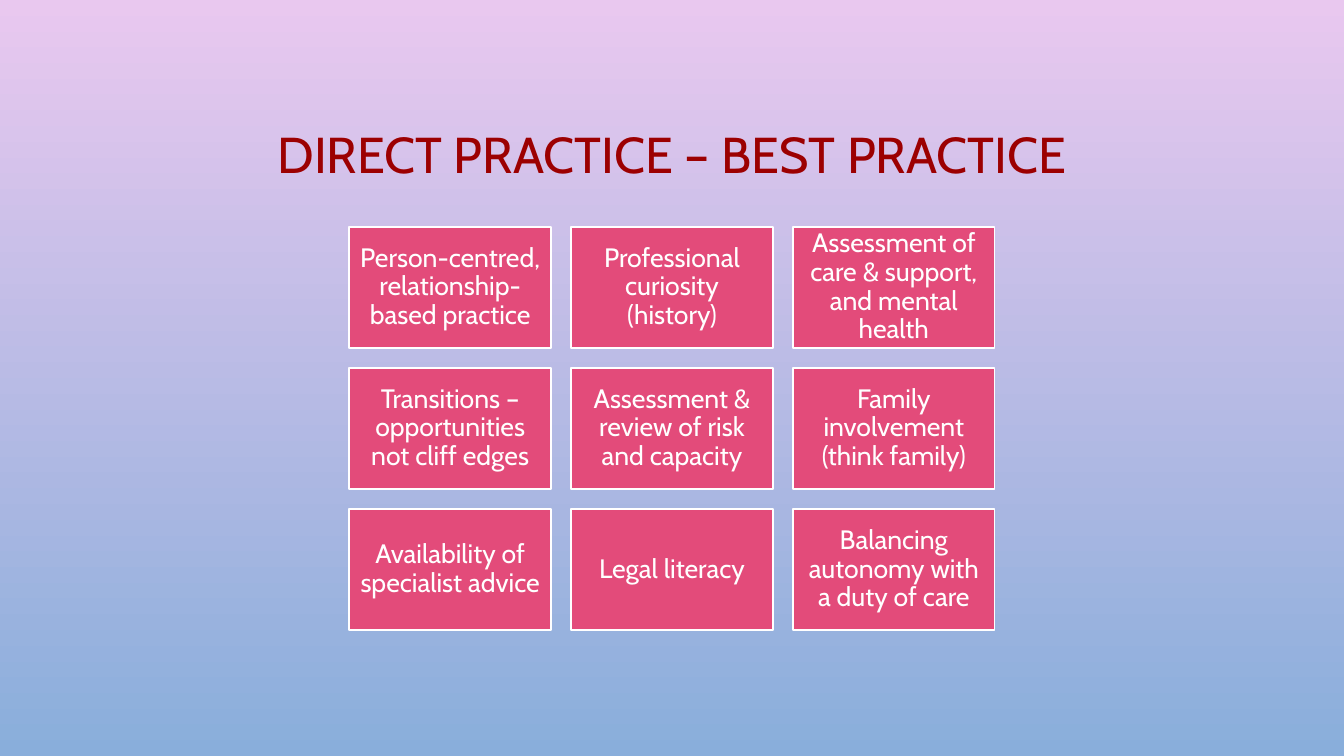
from pptx import Presentation
from pptx.dml.color import RGBColor
from pptx.enum.shapes import MSO_SHAPE
from pptx.enum.text import MSO_ANCHOR, PP_ALIGN
from pptx.util import Inches, Pt

TITLE = "DIRECT PRACTICE – BEST PRACTICE"
CARDS = [
    ["Person-centred, relationship-based practice",
     "Professional curiosity (history)",
     "Assessment of care & support, and mental health"],
    ["Transitions – opportunities not cliff edges",
     "Assessment & review of risk and capacity",
     "Family involvement (think family)"],
    ["Availability of specialist advice",
     "Legal literacy",
     "Balancing autonomy with a duty of care"],
]

FONT = "Cabin"
LILAC = RGBColor(0xE9, 0xC8, 0xEF)
BLUE = RGBColor(0x89, 0xAE, 0xDB)
RED = RGBColor(0x9C, 0x00, 0x01)
PINK = RGBColor(0xE3, 0x4B, 0x7A)
WHITE = RGBColor(0xFF, 0xFF, 0xFF)
RECT = MSO_SHAPE.RECTANGLE
MIDDLE = MSO_ANCHOR.MIDDLE
CENTER = PP_ALIGN.CENTER

WIDE, HIGH = 13.33, 7.5
CARD_W, CARD_H, GAP = 2, 1.2, 0.2
TOP = 0.3 * HIGH
COLS = len(CARDS[0])
LEFT = (WIDE - COLS * CARD_W - (COLS - 1) * GAP) / 2


def write(shape, text, size, color):
    frame = shape.text_frame
    frame.text = text
    frame.word_wrap = True
    frame.vertical_anchor = MIDDLE
    line = frame.paragraphs[0]
    line.alignment = CENTER
    line.line_spacing = 0.9
    font = line.runs[0].font
    font.name = FONT
    font.size = Pt(size)
    font.color.rgb = color


def add_card(slide, row, col, text):
    x = LEFT + col * (CARD_W + GAP)
    y = TOP + row * (CARD_H + GAP)
    card = slide.shapes.add_shape(
        RECT, Inches(x), Inches(y), Inches(CARD_W), Inches(CARD_H))
    card.shadow.inherit = False
    card.fill.solid()
    card.fill.fore_color.rgb = PINK
    card.line.color.rgb = WHITE
    card.line.width = Pt(1.25)
    frame = card.text_frame
    frame.margin_left = frame.margin_right = Inches(0.08)
    frame.margin_top = frame.margin_bottom = Inches(0.08)
    write(card, text, 19, WHITE)


def main():
    deck = Presentation()
    deck.slide_width = Inches(WIDE)
    deck.slide_height = Inches(HIGH)
    slide = deck.slides.add_slide(deck.slide_layouts[6])

    fill = slide.background.fill
    fill.gradient()
    fill.gradient_angle = 270
    for stop, color in zip(fill.gradient_stops, (LILAC, BLUE)):
        stop.color.rgb = color

    title = slide.shapes.add_textbox(
        Inches(1), Inches(0.68), Inches(WIDE - 2), Inches(1.75))
    write(title, TITLE, 36, RED)

    for row, texts in enumerate(CARDS):
        for col, text in enumerate(texts):
            add_card(slide, row, col, text)

    deck.save("out.pptx")


if __name__ == "__main__":
    main()
